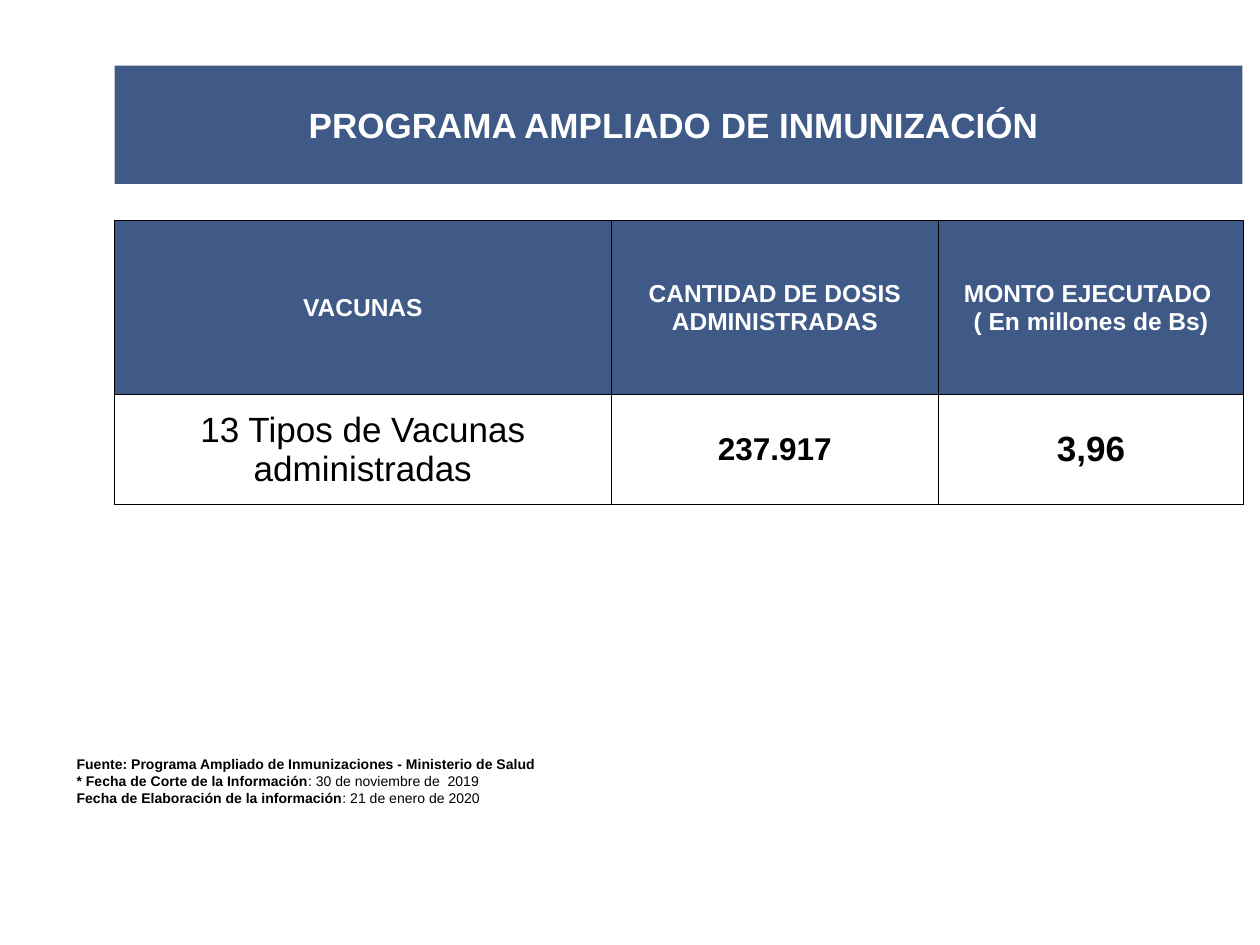
from lxml.etree import SubElement
from pptx import Presentation
from pptx.dml.color import RGBColor
from pptx.enum.text import MSO_ANCHOR, PP_ALIGN
from pptx.oxml.ns import qn
from pptx.util import Inches, Pt

BLUE = "3F5A87"
WHITE = "FFFFFF"
BLACK = "000000"


def color(value):
    return RGBColor.from_string(value)


class SlideBuilder:
    font_name = "Arial"

    def __init__(self, presentation):
        self.slide = presentation.slides.add_slide(presentation.slide_layouts[5])

    def fill(self, target, value):
        target.fill.solid()
        target.fill.fore_color.rgb = color(value)

    def format_run(self, run, size, value, bold):
        run.font.name = self.font_name
        run.font.size = Pt(size)
        run.font.bold = bold
        run.font.color.rgb = color(value)

    def format_frame(self, text_frame, size, value, bold):
        for paragraph in text_frame.paragraphs:
            paragraph.alignment = PP_ALIGN.CENTER
            for run in paragraph.runs:
                self.format_run(run, size, value, bold)

    def place_title(self, text, left, top, width, height):
        title = self.slide.shapes.title
        title.left, title.top = Inches(left), Inches(top)
        title.width, title.height = Inches(width), Inches(height)
        self.fill(title, BLUE)
        title.text_frame.text = text
        title.text_frame.vertical_anchor = MSO_ANCHOR.MIDDLE
        self.format_frame(title.text_frame, 20, WHITE, True)

    def add_borders(self, cell):
        properties = cell._tc.get_or_add_tcPr()
        for position, side in enumerate(("a:lnL", "a:lnR", "a:lnT", "a:lnB")):
            line = SubElement(properties, qn(side), w=str(Pt(0.5)))
            solid = SubElement(line, qn("a:solidFill"))
            SubElement(solid, qn("a:srgbClr"), val=BLACK)
            properties.insert(position, line)

    def add_table(self, rows, styles, left, top, column_widths, row_heights):
        frame = self.slide.shapes.add_table(
            len(rows), len(column_widths), Inches(left), Inches(top),
            Inches(sum(column_widths)), Inches(sum(row_heights)))
        table = frame.table
        for column, width in zip(table.columns, column_widths):
            column.width = Inches(width)
        for row, height, texts, row_styles in zip(table.rows, row_heights, rows, styles):
            row.height = Inches(height)
            for cell, text, style in zip(row.cells, texts, row_styles):
                self.format_cell(cell, text, *style)

    def format_cell(self, cell, text, size, value, bold, background):
        cell.text_frame.text = text
        cell.vertical_anchor = MSO_ANCHOR.MIDDLE
        cell.margin_left = cell.margin_right = cell.margin_top = Inches(0.01)
        cell.margin_bottom = 0
        self.format_frame(cell.text_frame, size, value, bold)
        self.fill(cell, background)
        self.add_borders(cell)

    def add_notes_box(self, lines, left, top, width, height):
        box = self.slide.shapes.add_textbox(
            Inches(left), Inches(top), Inches(width), Inches(height))
        text_frame = box.text_frame
        text_frame.word_wrap = True
        text_frame.text = "\n".join(label for label, detail in lines)
        for paragraph, (label, detail) in zip(text_frame.paragraphs, lines):
            self.format_run(paragraph.runs[0], 8, BLACK, True)
            if detail:
                run = paragraph.add_run()
                run.text = detail
                self.format_run(run, 8, BLACK, False)


def main():
    presentation = Presentation()
    presentation.slide_width = Inches(10)
    presentation.slide_height = Inches(7.5)
    builder = SlideBuilder(presentation)

    builder.place_title("PROGRAMA AMPLIADO DE INMUNIZACIÓN ", 0.91, 0.52, 8.95, 0.94)

    rows = [
        ["VACUNAS", "CANTIDAD DE DOSIS ADMINISTRADAS",
         "MONTO EJECUTADO \n( En millones de Bs)"],
        ["13 Tipos de Vacunas administradas", "237.917", "3,96"],
    ]
    styles = [
        [(14, WHITE, True, BLUE)] * 3,
        [(20, BLACK, False, WHITE), (18, BLACK, True, WHITE), (20, BLACK, True, WHITE)],
    ]
    builder.add_table(rows, styles, 0.91, 1.75, [3.94, 2.6, 2.42], [1.38, 0.87])

    builder.add_notes_box([
        ("Fuente: Programa Ampliado de Inmunizaciones - Ministerio de Salud", ""),
        ("* Fecha de Corte de la Información", ": 30 de noviembre de  2019"),
        ("Fecha de Elaboración de la información", ": 21 de enero de 2020"),
    ], 0.51, 5.95, 8.96, 0.5)

    presentation.save("out.pptx")


if __name__ == "__main__":
    main()
